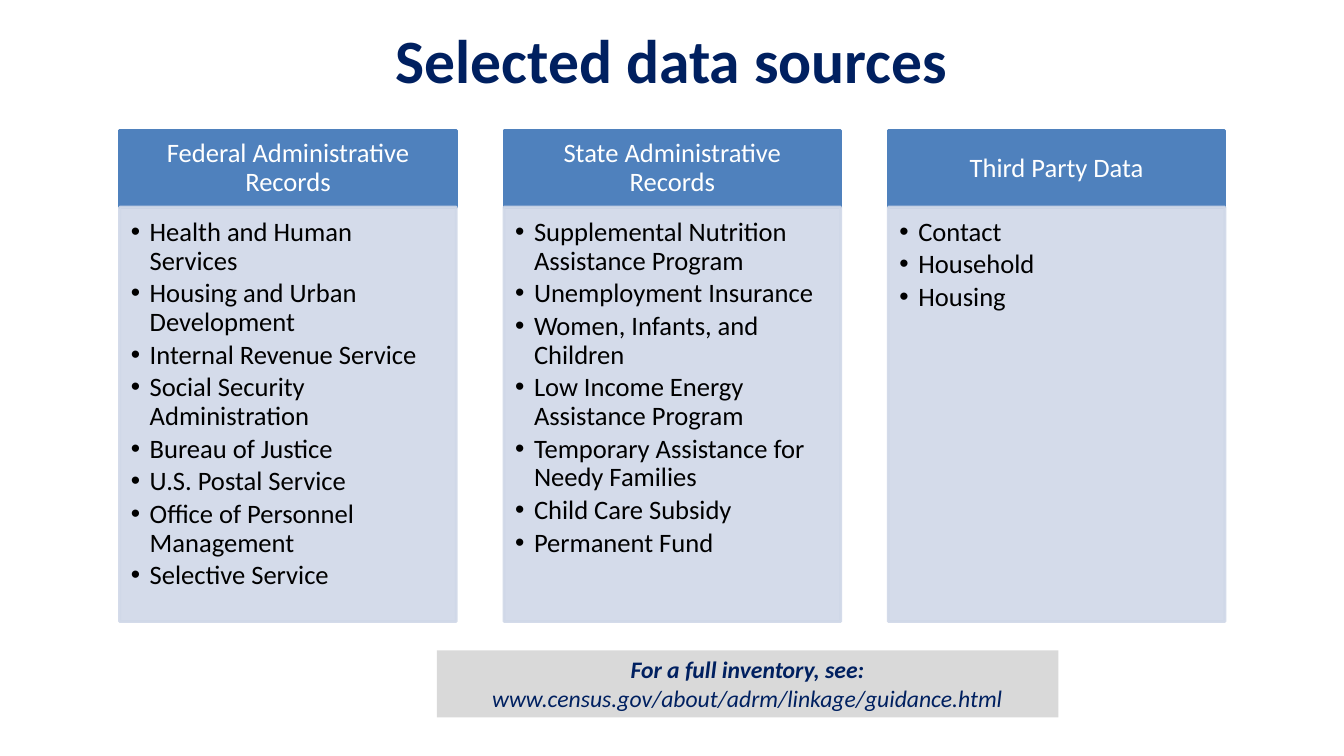
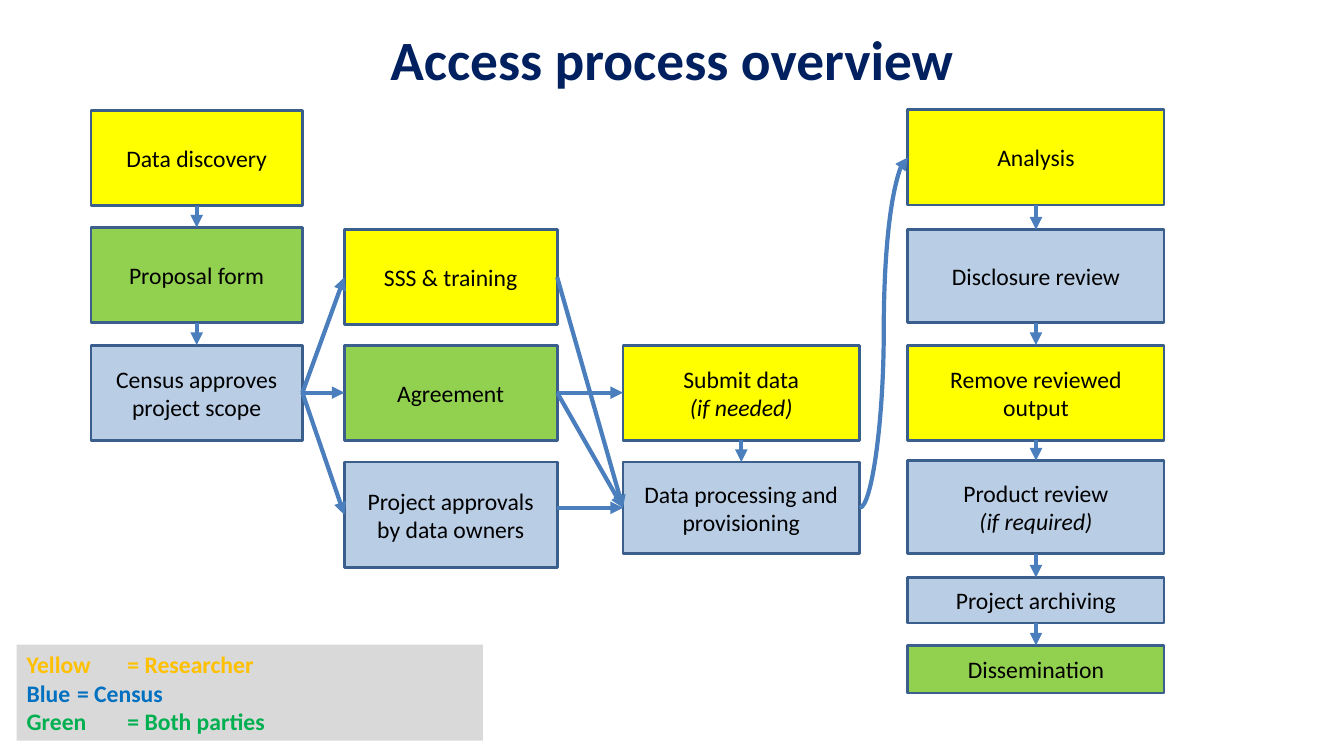
from lxml import etree
from pptx import Presentation
from pptx.dml.color import RGBColor
from pptx.enum import shapes, text
from pptx.oxml import ns
from pptx.util import Pt

FONT = "Calibri"
NAVY = RGBColor(0x00, 0x20, 0x60)
WHITE = RGBColor(0xFF, 0xFF, 0xFF)
BLACK = RGBColor(0x00, 0x00, 0x00)
HEADER_BLUE = RGBColor(0x4F, 0x81, 0xBD)
PANEL_BLUE = RGBColor(0xD0, 0xD8, 0xE8)
NOTE_GREY = RGBColor(0xD9, 0xD9, 0xD9)
BOX_BORDER = RGBColor(0x3A, 0x5F, 0x8C)
ARROW_BLUE = RGBColor(0x4B, 0x7E, 0xBC)
RESEARCHER = RGBColor(0xFF, 0xFF, 0x00)
CENSUS = RGBColor(0xB9, 0xCD, 0xE5)
BOTH = RGBColor(0x92, 0xD0, 0x50)
LEGEND_YELLOW = RGBColor(0xFF, 0xC0, 0x00)
LEGEND_BLUE = RGBColor(0x00, 0x70, 0xC0)
LEGEND_GREEN = RGBColor(0x00, 0xB0, 0x50)

SMALL = 16.9
TOP, LEFT, BOTTOM, RIGHT = range(4)  # connection sites of a rectangle

SOURCES = [
    ("Federal Administrative Records", [
        "Health and Human Services", "Housing and Urban Development",
        "Internal Revenue Service", "Social Security Administration",
        "Bureau of Justice", "U.S. Postal Service",
        "Office of Personnel Management", "Selective Service"]),
    ("State Administrative Records", [
        "Supplemental Nutrition Assistance Program", "Unemployment Insurance",
        "Women, Infants, and Children", "Low Income Energy Assistance Program",
        "Temporary Assistance for Needy Families", "Child Care Subsidy",
        "Permanent Fund"]),
    ("Third Party Data", ["Contact", "Household", "Housing"]),
]

# Each stage: left, width, then steps of (text, owner colour, top, height)
STAGES = [
    (65, 151, [
        ("Data discovery", RESEARCHER, 79, 68),
        ("Proposal form", BOTH, 162.5, 68),
        ("Census approves project scope", CENSUS, 246.5, 68)]),
    (246, 152, [
        ("SSS & training", RESEARCHER, 164, 68),
        ("Agreement", BOTH, 246.5, 68),
        ("Project approvals by data owners", CENSUS, 330, 75.5)]),
    (445, 169, [
        ("Submit data\n(if needed)", RESEARCHER, 246.5, 68),
        ("Data processing and provisioning", CENSUS, 330, 65.5)]),
    (648.5, 183, [
        ("Analysis", RESEARCHER, 78.5, 68),
        ("Disclosure review", CENSUS, 164, 66.5),
        ("Remove reviewed output", RESEARCHER, 246.5, 68),
        ("Product review\n(if required)", CENSUS, 329, 66.5),
        ("Project archiving", CENSUS, 412.5, 32.5),
        ("Dissemination", BOTH, 461, 34)]),
]


def set_font(font, size, color, bold=False, italic=False):
    font.name, font.size, font.bold, font.italic = FONT, Pt(size), bold, italic
    font.color.rgb = color


def add_titled_page(deck, title, size):
    page = deck.slides.add_slide(deck.slide_layouts[5])
    holder = page.shapes.title
    holder.left, holder.top, holder.width, holder.height = Pt(85), Pt(0), Pt(790), Pt(84)
    frame = holder.text_frame
    frame.text = title
    frame.vertical_anchor = text.MSO_ANCHOR.MIDDLE
    para = frame.paragraphs[0]
    para.alignment = text.PP_ALIGN.CENTER
    set_font(para.font, size, NAVY, bold=True)
    return page


def add_box(page, left, top, width, height, fill, border=None):
    box = page.shapes.add_shape(shapes.MSO_SHAPE.RECTANGLE,
                                Pt(left), Pt(top), Pt(width), Pt(height))
    box.shadow.inherit = False
    box.fill.solid()
    box.fill.fore_color.rgb = fill
    if border is None:
        box.line.fill.background()
    else:
        box.line.color.rgb = border
        box.line.width = Pt(2)
    box.text_frame.word_wrap = True
    return box


def set_opacity(box, percent):
    """Apply one opacity to the fill and the outline."""
    for color in box._element.spPr.iter(ns.qn("a:srgbClr")):
        etree.SubElement(color, ns.qn("a:alpha"), val=str(percent * 1000))


def set_insets(frame, left, top, right, bottom):
    frame.margin_left, frame.margin_top = Pt(left), Pt(top)
    frame.margin_right, frame.margin_bottom = Pt(right), Pt(bottom)


def add_bullet(para, indent):
    props = para._p.get_or_add_pPr()
    props.set("marL", str(Pt(indent)))
    props.set("indent", str(-Pt(indent)))
    etree.SubElement(props, ns.qn("a:buFont"), typeface="Arial")
    etree.SubElement(props, ns.qn("a:buChar"), char="•")


def add_source_column(page, left, top, width, heading, items):
    header_height, panel_height = 55, 296
    header = add_box(page, left, top, width, header_height, HEADER_BLUE, HEADER_BLUE)
    set_insets(header.text_frame, 10.8, 5.8, 10.8, 5.8)
    header.text_frame.text = heading
    para = header.text_frame.paragraphs[0]
    para.alignment = text.PP_ALIGN.CENTER
    para.line_spacing = 0.9
    set_font(para.font, 19, WHITE)

    panel = add_box(page, left, top + header_height, width, panel_height,
                    PANEL_BLUE, PANEL_BLUE)
    set_opacity(panel, 90)
    frame = panel.text_frame
    set_insets(frame, 8, 8, 10.8, 12)
    frame.vertical_anchor = text.MSO_ANCHOR.TOP
    frame.text = "\n".join(items)
    for para in frame.paragraphs:
        add_bullet(para, 13.5)
        para.alignment = text.PP_ALIGN.LEFT
        para.line_spacing = 0.9
        para.space_after = Pt(2.8)
        set_font(para.font, 19, BLACK)


def add_inventory_note(page, left, top, width, height):
    frame = add_box(page, left, top, width, height, NOTE_GREY).text_frame
    frame.vertical_anchor = text.MSO_ANCHOR.TOP
    para = frame.paragraphs[0]
    para.alignment = text.PP_ALIGN.CENTER
    set_font(para.font, SMALL, NAVY, italic=True)
    lead = para.add_run()
    lead.text = "For a full inventory, see: "
    lead.font.bold = True
    para.add_run().text = "www.census.gov/about/adrm/linkage/guidance.html"


def add_step(page, left, top, width, height, label, owner):
    """Add a process box; lines after the first are italic remarks."""
    box = add_box(page, left, top, width, height, owner, BOX_BORDER)
    box.text_frame.text = label
    for index, para in enumerate(box.text_frame.paragraphs):
        para.alignment = text.PP_ALIGN.CENTER
        set_font(para.font, SMALL, BLACK, italic=index > 0)
    return box


def add_arrow(page, start, start_site, end, end_site, kind=shapes.MSO_CONNECTOR.STRAIGHT):
    """Join two boxes; start may also be an (x, y) point in points."""
    from_point = isinstance(start, tuple)
    x, y = start if from_point else (0, 0)
    arrow = page.shapes.add_connector(kind, Pt(x), Pt(y), Pt(x), Pt(y))
    if not from_point:
        arrow.begin_connect(start, start_site)
    arrow.end_connect(end, end_site)
    arrow.line.color.rgb = ARROW_BLUE
    arrow.line.width = Pt(3)
    etree.SubElement(arrow.line._get_or_add_ln(), ns.qn("a:tailEnd"), type="triangle")
    etree.SubElement(arrow._element.spPr, ns.qn("a:effectLst"))


def add_legend(page, left, top, width, height):
    frame = add_box(page, left, top, width, height, NOTE_GREY).text_frame
    frame.text = "Yellow\t= Researcher\nBlue\t= Census\nGreen\t= Both parties"
    colors = (LEGEND_YELLOW, LEGEND_BLUE, LEGEND_GREEN)
    for para, color in zip(frame.paragraphs, colors):
        para.alignment = text.PP_ALIGN.LEFT
        set_font(para.font, SMALL, color, bold=True)


def build_sources(deck):
    page = add_titled_page(deck, "Selected data sources", 44)
    for index, (heading, items) in enumerate(SOURCES):
        add_source_column(page, 85.5 + index * 274.5, 93, 240.5, heading, items)
    add_inventory_note(page, 312, 464.5, 444, 48)


def build_process(deck):
    page = add_titled_page(deck, "Access process overview", 39.6)
    request, approval, data, output = [
        [add_step(page, left, top, width, height, label, owner)
         for label, owner, top, height in steps]
        for left, width, steps in STAGES]

    for stage in (request, data, output):
        for upper, lower in zip(stage, stage[1:]):
            add_arrow(page, upper, BOTTOM, lower, TOP)
    for step in approval:
        add_arrow(page, request[-1], RIGHT, step, LEFT)

    training, agreement, _ = approval
    submission, processing = data
    add_arrow(page, agreement, RIGHT, submission, LEFT)
    for start in (training, agreement, (398, 362.75)):
        add_arrow(page, start, RIGHT, processing, LEFT)
    add_arrow(page, processing, RIGHT, output[0], LEFT, shapes.MSO_CONNECTOR.CURVE)
    add_legend(page, 12, 460.5, 333, 68.5)


def main():
    deck = Presentation()
    deck.slide_width, deck.slide_height = Pt(960), Pt(540)
    build_sources(deck)
    build_process(deck)
    deck.save("out.pptx")


if __name__ == "__main__":
    main()
